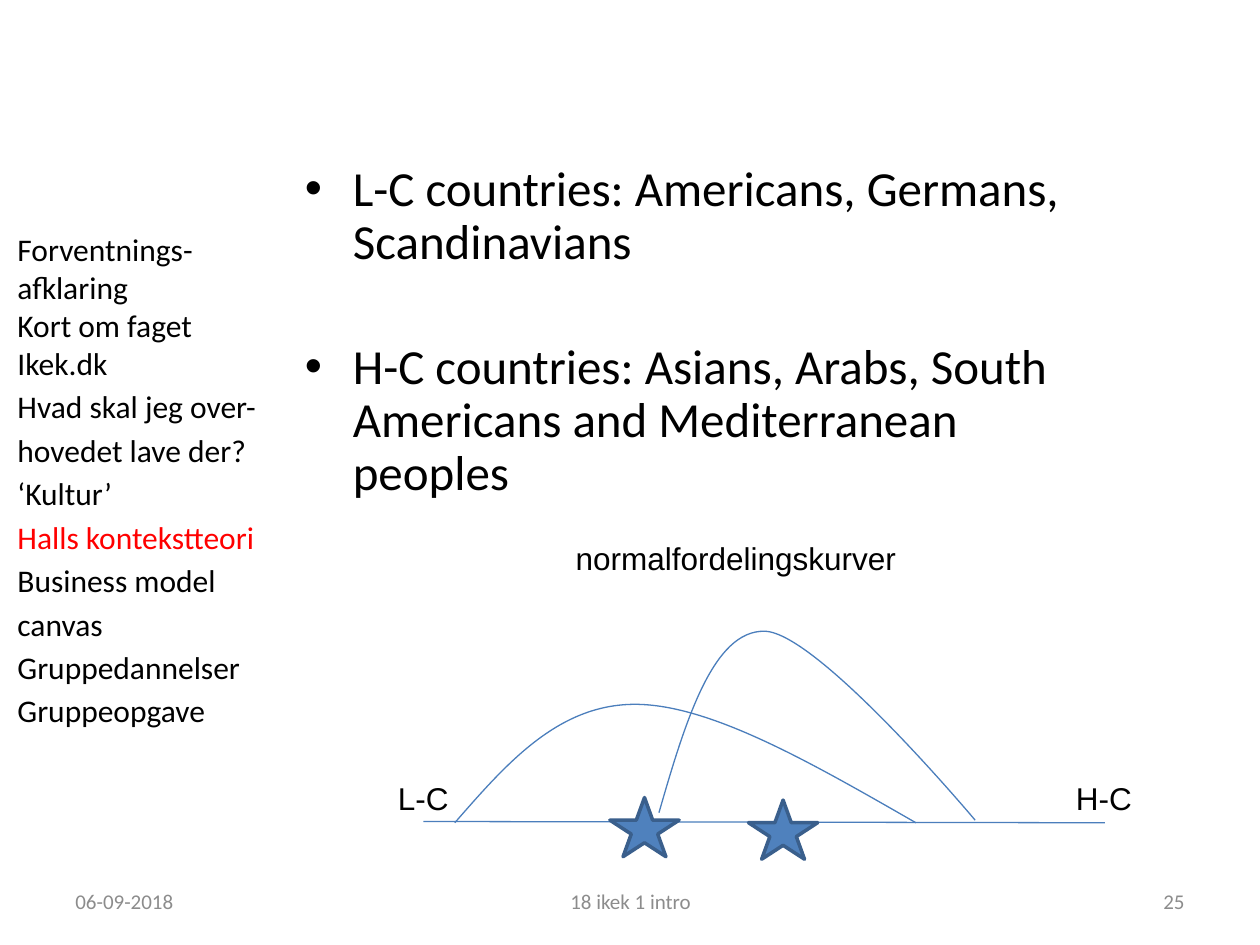
from dataclasses import dataclass

from lxml.etree import SubElement
from pptx import Presentation
from pptx.dml.color import RGBColor
from pptx.enum.shapes import MSO_CONNECTOR as Connector, MSO_SHAPE as Shape
from pptx.enum.text import MSO_ANCHOR as Anchor, MSO_AUTO_SIZE as AutoSize, PP_ALIGN as Align
from pptx.oxml.ns import qn
from pptx.util import Inches, Pt


@dataclass(frozen=True)
class Theme:
    text: str = "000000"
    accent: str = "FF0000"
    muted: str = "8C8C8C"
    curve: str = "4B7EBC"
    star: str = "4F81BD"
    star_edge: str = "3A5F8C"
    main_font: str = "Calibri"
    label_font: str = "Arial"
    body_size: int = 28
    text_size: int = 18
    footer_size: int = 12


class SlideBuilder:
    def __init__(self, slide, theme):
        self.slide = slide
        self.theme = theme

    def style(self, para, size, color, font):
        para.font.size = Pt(size)
        para.font.name = font
        para.font.color.rgb = RGBColor.from_string(color)

    def outline(self, shape, color, width):
        shape.line.color.rgb = RGBColor.from_string(color)
        shape.line.width = Pt(width)

    def bullets(self, left, top, width, height, items):
        """Fill the body placeholder with (text, space before) items."""
        body = self.slide.placeholders[1]
        body.left, body.top = Inches(left), Inches(top)
        body.width, body.height = Inches(width), Inches(height)
        frame = body.text_frame
        frame.auto_size = AutoSize.NONE
        frame.text = "\n".join(text for text, _ in items)
        for para, (_, gap) in zip(frame.paragraphs, items):
            self.style(para, self.theme.body_size, self.theme.text, self.theme.main_font)
            para.line_spacing = 0.9
            para.space_before = Pt(gap)
            properties = para._p.get_or_add_pPr()
            properties.set("marL", str(Inches(0.38)))
            properties.set("indent", str(-Inches(0.38)))

    def text(self, left, top, width, height, wrap=True, anchor=Anchor.TOP):
        box = self.slide.shapes.add_textbox(
            Inches(left), Inches(top), Inches(width), Inches(height))
        frame = box.text_frame
        frame.word_wrap = wrap
        frame.vertical_anchor = anchor
        return frame

    def label(self, left, top, width, text):
        para = self.text(left, top, width, 0.4, wrap=False).paragraphs[0]
        para.text = text
        self.style(para, self.theme.text_size, self.theme.text, self.theme.label_font)

    def footer(self, left, width, text, align):
        para = self.text(left, 6.95, width, 0.4, anchor=Anchor.MIDDLE).paragraphs[0]
        para.text = text
        para.alignment = align
        self.style(para, self.theme.footer_size, self.theme.muted, self.theme.main_font)

    def agenda(self, left, top, width, height, items, current):
        frame = self.text(left, top, width, height)
        for index, (text, spacing) in enumerate(items):
            para = frame.paragraphs[0] if index == 0 else frame.add_paragraph()
            para.text = text
            para.line_spacing = spacing
            color = self.theme.accent if text == current else self.theme.text
            self.style(para, self.theme.text_size, color, self.theme.main_font)

    def axis(self, start, end):
        line = self.slide.shapes.add_connector(
            Connector.STRAIGHT, *map(Inches, start + end))
        self.outline(line, self.theme.curve, 0.75)
        SubElement(line._element.spPr, qn("a:effectLst"))

    def star(self, left, top):
        star = self.slide.shapes.add_shape(
            Shape.STAR_5_POINT, Inches(left), Inches(top), Inches(0.55), Inches(0.47))
        star.shadow.inherit = False
        star.fill.solid()
        star.fill.fore_color.rgb = RGBColor.from_string(self.theme.star)
        self.outline(star, self.theme.star_edge, 2)

    def curve(self, knots):
        """Draw joined cubic Bezier segments; every third knot is on the curve."""
        points = [(Inches(x), Inches(y)) for x, y in knots]
        builder = self.slide.shapes.build_freeform(*points[0])
        builder.add_line_segments(points[1:], close=False)
        shape = builder.convert_to_shape()
        shape.shadow.inherit = False
        shape.fill.background()
        self.outline(shape, self.theme.curve, 0.75)

        # Merge each three straight segments into one cubic segment
        lines = list(shape._element.iter(qn("a:lnTo")))
        outline = lines[0].getparent()
        for first in range(0, len(lines), 3):
            cubic = SubElement(outline, qn("a:cubicBezTo"))
            for line in lines[first:first + 3]:
                cubic.append(line[0])
                outline.remove(line)


def main():
    deck = Presentation()
    deck.slide_width, deck.slide_height = Inches(10), Inches(7.5)
    slide = deck.slides.add_slide(deck.slide_layouts[1])
    title = slide.shapes.title._element
    title.getparent().remove(title)
    page = SlideBuilder(slide, Theme())

    # Country groups
    page.bullets(2.32, 1.25, 6.65, 5.08, [
        ("L-C countries: Americans, Germans, Scandinavians", 5.6),
        ("H-C countries: Asians, Arabs, South Americans and Mediterranean peoples", 41.5),
    ])

    # Footer
    page.footer(0.5, 2.33, "06-09-2018", Align.LEFT)
    page.footer(3.42, 3.17, "18 ikek 1 intro", Align.CENTER)
    page.footer(7.17, 2.33, "25", Align.RIGHT)

    # Distribution curves on the context axis
    page.axis((3.36, 6.52), (8.77, 6.53))
    page.star(5.94, 6.35)
    page.star(4.84, 6.33)
    page.curve([(3.61, 6.53), (4.02, 6.06), (4.43, 5.59), (5.04, 5.59),
                (5.64, 5.59), (6.45, 6.06), (7.27, 6.53)])
    page.curve([(5.23, 6.45), (5.44, 5.72), (5.66, 5), (6.07, 5.01),
                (6.49, 5.02), (7.74, 6.51), (7.74, 6.51)])
    page.label(4.47, 4.23, 2.77, "normalfordelingskurver")
    page.label(3.06, 6.13, 0.61, "L-C")
    page.label(8.44, 6.13, 0.65, "H-C")

    # Agenda with the current topic highlighted
    page.agenda(0.04, 1.78, 2.2, 4.1, [
        ("Forventnings-", 1.0),
        ("afklaring", 1.0),
        ("Kort om faget", 1.0),
        ("Ikek.dk", 1.0),
        ("Hvad skal jeg over-hovedet lave der?\v‘Kultur’", 1.15),
        ("Halls kontekstteori", 1.15),
        ("Business model canvas", 1.15),
        ("Gruppedannelser", 1.15),
        ("Gruppeopgave", 1.15),
    ], current="Halls kontekstteori")

    deck.save("out.pptx")


if __name__ == "__main__":
    main()
